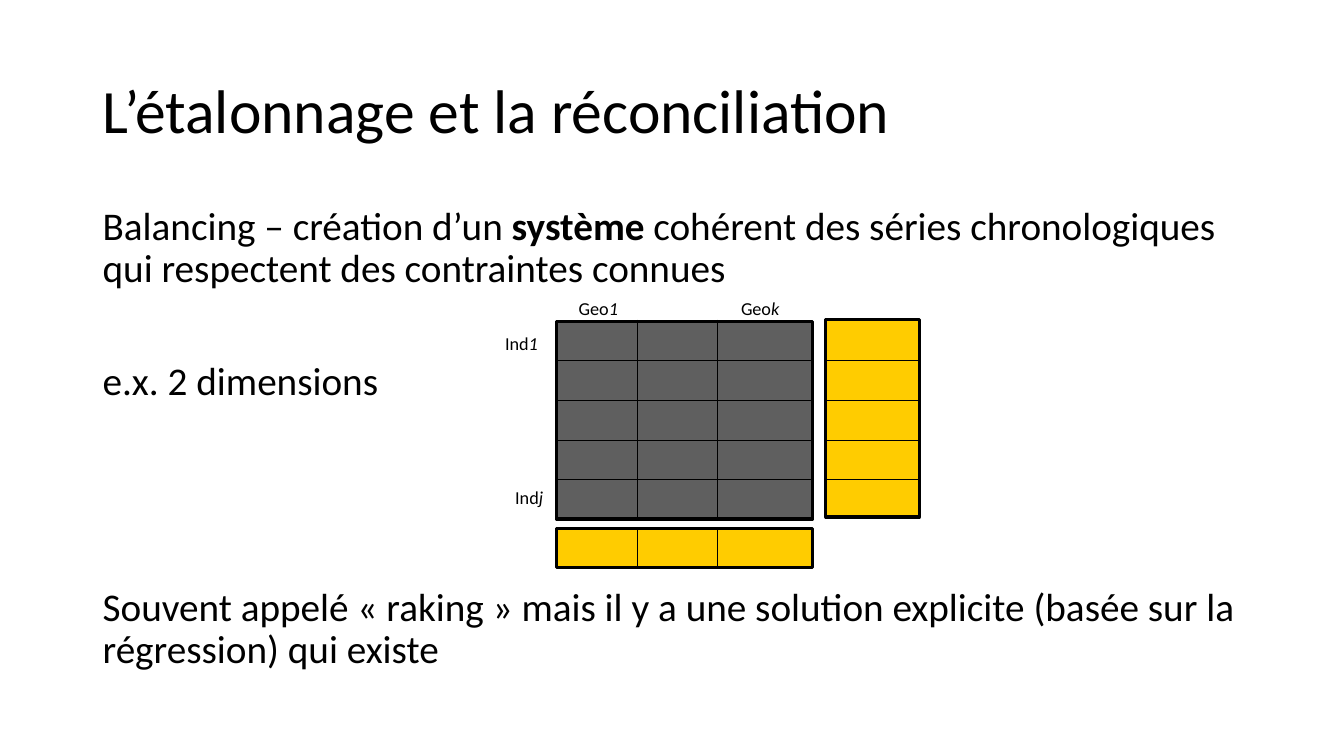
from pptx import Presentation
from pptx.dml.color import RGBColor
from pptx.enum.shapes import MSO_CONNECTOR, MSO_SHAPE
from pptx.enum.text import MSO_ANCHOR
from pptx.oxml.ns import qn
from pptx.util import Inches, Pt
from lxml import etree

RECTANGLE = MSO_SHAPE.RECTANGLE
STRAIGHT = MSO_CONNECTOR.STRAIGHT
TOP, MIDDLE = MSO_ANCHOR.TOP, MSO_ANCHOR.MIDDLE

THEME = {
    "font": "Calibri",
    "ink": RGBColor.from_string("000000"),
    "cells": RGBColor.from_string("5F5F5F"),
    "totals": RGBColor.from_string("FFCC00"),
    "title": Pt(44),
    "body": Pt(28),
    "label": Pt(13),
    "border": Pt(2.25),
    "grid": Pt(0.75),
}

prs = Presentation()
prs.slide_width, prs.slide_height = Inches(13.33), Inches(7.5)
slide = prs.slides.add_slide(prs.slide_layouts[6])


def add_text(box, paragraphs, size, anchor=TOP, spacing=0.9, inset=0.1):
    """Each paragraph is (space before, [(text, format), ...])."""
    frame = slide.shapes.add_textbox(*map(Inches, box)).text_frame
    frame_format = {"word_wrap": True, "vertical_anchor": anchor,
                    "margin_left": Inches(inset), "margin_right": Inches(inset)}
    for name, value in frame_format.items():
        setattr(frame, name, value)
    for index, (before, runs) in enumerate(paragraphs):
        paragraph = frame.add_paragraph() if index else frame.paragraphs[0]
        paragraph.line_spacing = spacing
        paragraph.space_before = Pt(before)
        for text, emphasis in runs:
            run = paragraph.add_run()
            run.text = text
            run.font.color.rgb = THEME["ink"]
            for name, value in {"name": THEME["font"], "size": size, **emphasis}.items():
                setattr(run.font, name, value)


def add_rule(x1, y1, x2, y2):
    rule = slide.shapes.add_connector(STRAIGHT, *map(Inches, (x1, y1, x2, y2)))
    rule.line.color.rgb = THEME["ink"]
    rule.line.width = THEME["grid"]
    etree.SubElement(rule._element.spPr, qn("a:effectLst"))


# Title and body
add_text((0.92, 0.4, 11.5, 1.45), [(0, [("L’étalonnage et la réconciliation", {})])],
         THEME["title"], MIDDLE)
add_text((0.92, 2, 11.5, 4.76), [
    (0, [("Balancing – création d’un ", {}), ("système ", {"bold": True}),
         ("cohérent des séries chronologiques qui respectent des contraintes connues", {})]),
    (50.5, [("e.x. 2 dimensions", {})]),
    (131, [("Souvent appelé « raking » mais il y a une solution explicite "
            "(basée sur la régression) qui existe", {})]),
], THEME["body"])

# Matrix with its row and column totals
matrix_left, matrix_width = 5.52, 2.54
totals_left, totals_width = 8.19, 0.93
matrix_height = 1.96
blocks = [
    (matrix_left, 3.19, matrix_width, matrix_height, "cells"),
    (matrix_left, 5.24, matrix_width, 0.39, "totals"),
    (totals_left, 3.17, totals_width, matrix_height, "totals"),
]
for left, top, width, height, color in blocks:
    block = slide.shapes.add_shape(RECTANGLE, *map(Inches, (left, top, width, height)))
    block.shadow.inherit = False
    block.fill.solid()
    block.fill.fore_color.rgb = THEME[color]
    block.line.color.rgb = THEME["ink"]
    block.line.width = THEME["border"]

# Row and column rules
for row in range(4):
    y = 3.58 + row * 0.393
    for left, width in ((matrix_left, matrix_width), (totals_left, totals_width)):
        add_rule(left, y, left + width, y)
for column in (1, 2):
    x = matrix_left + column * 0.8
    for top, bottom in ((3.17, 5.13), (5.25, 5.64)):
        add_rule(x, top, x, bottom)

# Dimension labels
for left, top, stem, index in ((5.74, 2.9, "Geo", "1"), (7.35, 2.9, "Geo", "k"),
                               (5.01, 3.25, "Ind", "1"), (5.11, 4.78, "Ind", "j")):
    add_text((left, top, 0.5, 0.32), [(0, [(stem, {}), (index, {"italic": True})])],
             THEME["label"], spacing=1.0, inset=0)

prs.save("out.pptx")
